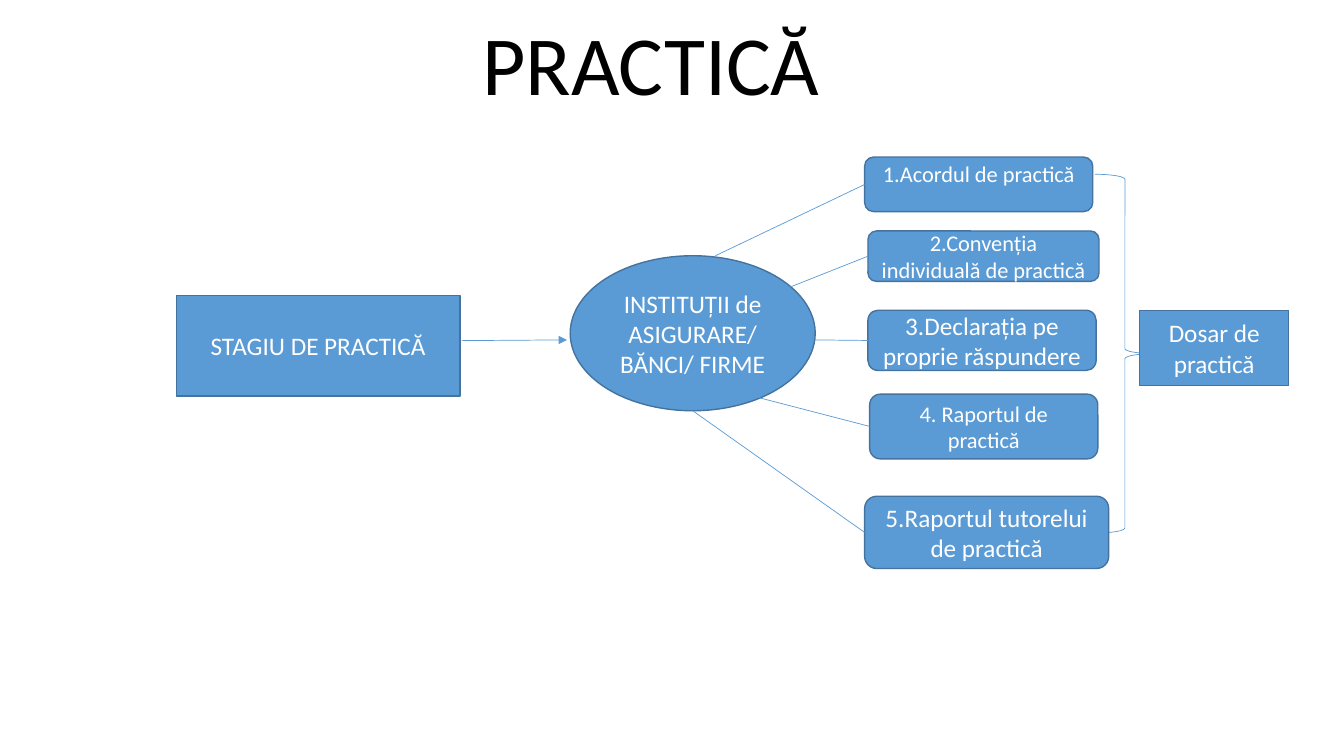
"""Build the slide on the stages and documents of a student's practical training."""
from lxml.etree import SubElement
from pptx import Presentation
from pptx.dml.color import RGBColor
from pptx.enum.shapes import MSO_CONNECTOR, MSO_SHAPE
from pptx.enum.text import MSO_ANCHOR, PP_ALIGN
from pptx.oxml.ns import qn
from pptx.util import Pt

COLORS = {"fill": "5B9BD5", "outline": "43739E", "light": "FFFFFF", "title": "000000"}


def write_text(shape, text, size, color, anchor):
    frame = shape.text_frame
    frame.word_wrap = True
    frame.vertical_anchor = anchor
    paragraph = frame.paragraphs[0]
    paragraph.text = text
    paragraph.alignment = PP_ALIGN.CENTER
    paragraph.font.name = "Calibri"
    paragraph.font.size = Pt(size)
    paragraph.font.color.rgb = RGBColor.from_string(COLORS[color])
    return frame


def add_line(slide, start_x, start_y, end_x, end_y):
    line = slide.shapes.add_connector(
        MSO_CONNECTOR.STRAIGHT, Pt(start_x), Pt(start_y), Pt(end_x), Pt(end_y))
    line.line.color.rgb = RGBColor.from_string(COLORS["fill"])
    line.line.width = Pt(0.5)
    SubElement(line.element.spPr, qn("a:effectLst"))
    return line


presentation = Presentation()
presentation.slide_width = Pt(960)
presentation.slide_height = Pt(540)
slide = presentation.slides.add_slide(presentation.slide_layouts[6])

title = slide.shapes.add_textbox(Pt(105), Pt(-0.7), Pt(720), Pt(85.7))
title_frame = write_text(title, "PRACTICĂ", 60, "title", MSO_ANCHOR.BOTTOM)
title_frame.paragraphs[0].line_spacing = 0.9

brace = slide.shapes.add_shape(
    MSO_SHAPE.RIGHT_BRACE, Pt(782), Pt(124.5), Pt(43), Pt(256.3))
brace.shadow.inherit = False
brace.fill.background()
brace.line.color.rgb = RGBColor.from_string(COLORS["fill"])
brace.line.width = Pt(0.5)

RECTANGLE, ROUNDED = MSO_SHAPE.RECTANGLE, MSO_SHAPE.ROUNDED_RECTANGLE
boxes = [
    (RECTANGLE, "STAGIU DE PRACTICĂ", 18, 126, 211, 202.5, 72),
    (MSO_SHAPE.OVAL, "INSTITUȚII de ASIGURARE/ BĂNCI/ FIRME", 18, 407.3, 182.7, 175, 110.7),
    (ROUNDED, "1.Acordul de practică", 16, 617.6, 112.2, 163, 39),
    (ROUNDED, "2.Convenția individuală de practică", 16, 620, 165, 165, 36),
    (ROUNDED, "3.Declarația pe proprie răspundere", 18, 620, 221.6, 163, 43),
    (ROUNDED, "4. Raportul de practică", 16, 621.2, 281.5, 163, 46.3),
    (ROUNDED, "5.Raportul tutorelui de practică", 18, 617.6, 354.5, 174.3, 51.6),
    (RECTANGLE, "Dosar de practică", 18, 814, 221.8, 106.6, 53.5),
]
frames = []
for kind, text, size, left, top, width, height in boxes:
    shape = slide.shapes.add_shape(kind, Pt(left), Pt(top), Pt(width), Pt(height))
    shape.shadow.inherit = False
    shape.fill.solid()
    shape.fill.fore_color.rgb = RGBColor.from_string(COLORS["fill"])
    shape.line.color.rgb = RGBColor.from_string(COLORS["outline"])
    shape.line.width = Pt(1)
    frames.append(write_text(shape, text, size, "light", MSO_ANCHOR.MIDDLE))

agreement_frame = frames[2]
agreement_frame.vertical_anchor = MSO_ANCHOR.TOP
agreement_frame.margin_top = Pt(0)

arrow = add_line(slide, 329.8, 243.3, 405, 242.8)
SubElement(arrow.line._get_or_add_ln(), qn("a:tailEnd"), type="triangle")

document_lines = [
    (511, 182.7, 617.6, 131.8),
    (559, 207.2, 620, 183),
    (582.3, 242.8, 620, 243.2),
    (538, 283, 621.2, 304.6),
    (494.8, 293.4, 617.6, 380.3),
]
for points in document_lines:
    add_line(slide, *points)

presentation.save("out.pptx")
